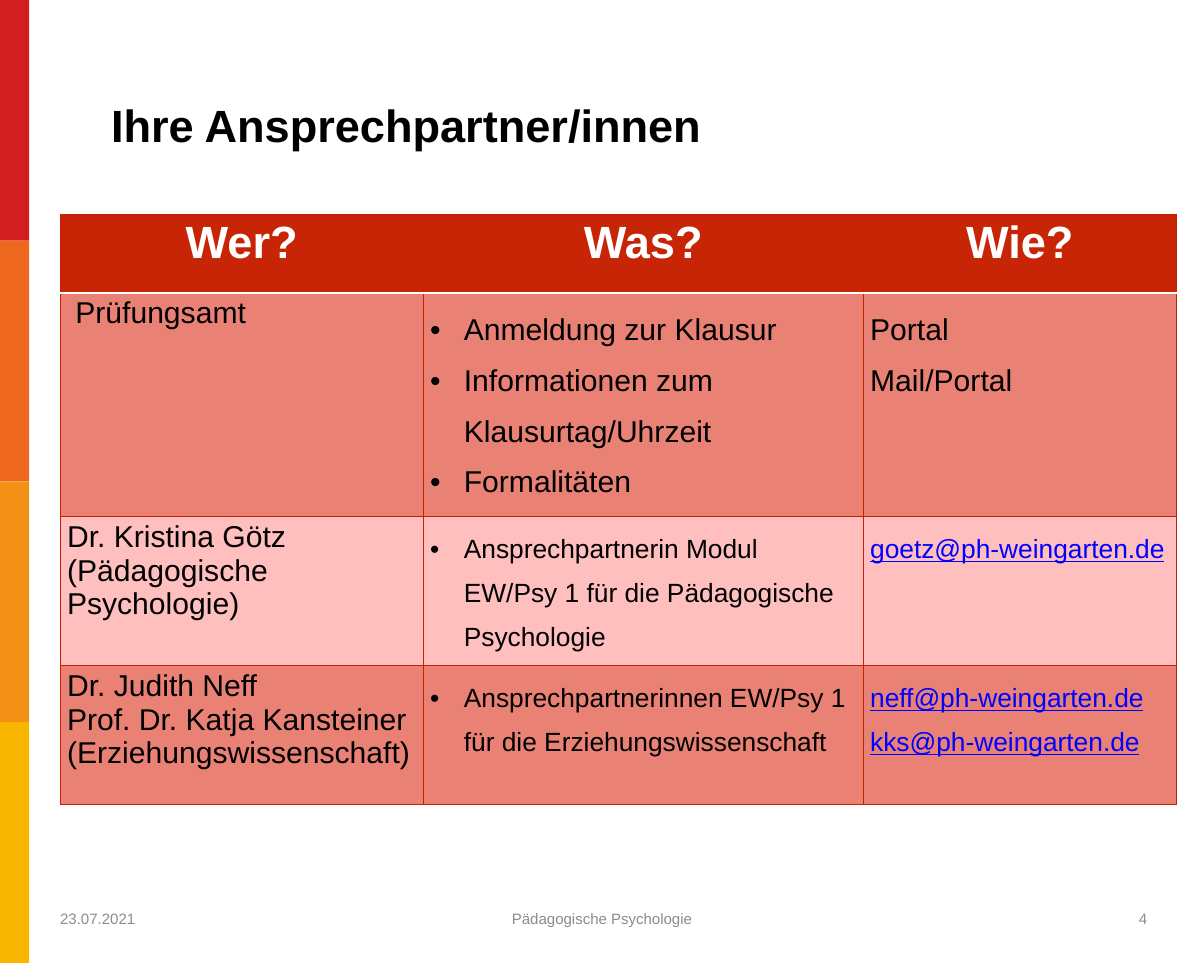
from dataclasses import dataclass

from lxml.etree import SubElement
from pptx import Presentation
from pptx.dml.color import RGBColor
from pptx.enum.shapes import MSO_SHAPE
from pptx.enum.text import MSO_ANCHOR, PP_ALIGN
from pptx.oxml import parse_xml
from pptx.oxml.ns import nsdecls, qn
from pptx.util import Inches, Pt

COLORS = {
    "red": "D11F20", "orange": "EE671F", "amber": "F29115", "yellow": "F9B600",
    "header": "C82506", "band": "E98275", "pale": "FFBFBF", "border": "C82101",
    "black": "000000", "white": "FFFFFF", "link": "0000FF", "gray": "8C8C8C",
}


@dataclass
class Label:
    text: str
    box: tuple[float, float, float, float]
    size: int = 16
    color: str = "gray"
    bold: bool = False
    align: PP_ALIGN = PP_ALIGN.LEFT
    inset: float = 0.1


@dataclass
class Contact:
    who: list[str]
    what: list[str]
    how: list[str]
    height: float
    fill: str
    size: int = 28
    link: bool = True


LABELS = [
    Label("Ihre Ansprechpartner/innen", (1.58, 0.87, 15.43, 1.93), 48, "black", True, inset=0.06),
    Label("23.07.2021", (0.79, 13.18, 4, 0.76)),
    Label("Pädagogische Psychologie", (5.89, 13.18, 6, 0.76), align=PP_ALIGN.CENTER),
    Label("4", (12.56, 13.18, 4.48, 0.76), align=PP_ALIGN.RIGHT),
]
HEADERS = ["Wer?", "Was?", "Wie?"]
HEADER_HEIGHT = 1.17
WIDTHS = [5.36, 6.5, 4.62]
CONTACTS = [
    Contact(
        [" Prüfungsamt"],
        ["Anmeldung zur Klausur", "Informationen zum Klausurtag/Uhrzeit", "Formalitäten"],
        ["Portal", "Mail/Portal"], 3.09, "band", size=32, link=False,
    ),
    Contact(
        ["Dr. Kristina Götz", "(Pädagogische Psychologie)"],
        ["Ansprechpartnerin Modul EW/Psy 1 für die Pädagogische Psychologie"],
        ["goetz@ph-weingarten.de"], 2.05, "pale",
    ),
    Contact(
        ["Dr. Judith Neff", "Prof. Dr. Katja Kansteiner", "(Erziehungswissenschaft)"],
        ["Ansprechpartnerinnen EW/Psy 1 für die Erziehungswissenschaft"],
        ["neff@ph-weingarten.de", "kks@ph-weingarten.de"], 2.05, "band",
    ),
]


def rgb(name: str) -> RGBColor:
    return RGBColor.from_string(COLORS[name])


def write(tf, lines: list[str], *, size: int, color: str = "black", bold: bool = False,
          underline: bool = False, align: PP_ALIGN = PP_ALIGN.LEFT,
          spacing: float = 1.0, bullet: bool = False) -> None:
    """Fill a text frame with one formatted paragraph per line."""
    for i, line in enumerate(lines):
        p = tf.paragraphs[0] if i == 0 else tf.add_paragraph()
        p.alignment = align
        p.line_spacing = spacing
        if bullet:
            pPr = p._p.get_or_add_pPr()
            pPr.set("marL", str(Inches(0.5)))
            pPr.set("indent", str(-Inches(0.5)))
            SubElement(pPr, qn("a:buFont"), typeface="Arial")
            SubElement(pPr, qn("a:buChar"), char="•")
        r = p.add_run()
        r.text = line
        r.font.name = "Arial"
        r.font.size = Pt(size)
        r.font.bold = bold
        r.font.underline = underline
        r.font.color.rgb = rgb(color)


def add_stripe(slide, index: int, color: str, height: float) -> None:
    sp = slide.shapes.add_shape(MSO_SHAPE.RECTANGLE, 0, Inches(index * height),
                                Inches(0.43), Inches(height))
    sp.shadow.inherit = False
    sp.fill.solid()
    sp.fill.fore_color.rgb = rgb(color)
    sp.line.fill.background()


def add_label(slide, label: Label) -> None:
    tf = slide.shapes.add_textbox(*map(Inches, label.box)).text_frame
    tf.word_wrap = True
    tf.vertical_anchor = MSO_ANCHOR.MIDDLE
    tf.margin_left = tf.margin_right = Inches(label.inset)
    write(tf, [label.text], size=label.size, color=label.color, bold=label.bold,
          align=label.align)


def style_cell(cell, fill: str, top: str = "border", bottom: str = "border") -> None:
    cell.fill.solid()
    cell.fill.fore_color.rgb = rgb(fill)
    sides = {"L": "border", "R": "border", "T": top, "B": bottom}
    for i, (side, color) in enumerate(sides.items()):
        width = Pt(2 if color == "white" else 0.75)
        cell._tc.get_or_add_tcPr().insert(i, parse_xml(
            f'<a:ln{side} {nsdecls("a")} w="{width}"><a:solidFill>'
            f'<a:srgbClr val="{COLORS[color]}"/></a:solidFill></a:ln{side}>'))


def add_contacts(slide) -> None:
    heights = [HEADER_HEIGHT] + [c.height for c in CONTACTS]
    table = slide.shapes.add_table(len(heights), len(WIDTHS), Inches(0.89), Inches(3.16),
                                   Inches(sum(WIDTHS)), Inches(sum(heights))).table
    for column, width in zip(table.columns, WIDTHS):
        column.width = Inches(width)
    for row, height in zip(table.rows, heights):
        row.height = Inches(height)
    for cell, text in zip(table.rows[0].cells, HEADERS):
        style_cell(cell, "header", bottom="white")
        write(cell.text_frame, [text], size=48, color="white", bold=True,
              align=PP_ALIGN.CENTER)
    for i, contact in enumerate(CONTACTS, 1):
        who, what, how = table.rows[i].cells
        for cell in (who, what, how):
            style_cell(cell, contact.fill, top="white" if i == 1 else "border")
        write(who.text_frame, contact.who, size=32)
        write(what.text_frame, contact.what, size=contact.size, spacing=1.5, bullet=True)
        write(how.text_frame, contact.how, size=contact.size, spacing=1.5,
              color="link" if contact.link else "black", underline=contact.link)


def main() -> None:
    prs = Presentation()
    prs.slide_width, prs.slide_height = Inches(17.78), Inches(14.22)
    slide = prs.slides.add_slide(prs.slide_layouts[6])
    stripes = ["red", "orange", "amber", "yellow"]
    for i, color in enumerate(stripes):
        add_stripe(slide, i, color, 14.22 / len(stripes))
    for label in LABELS:
        add_label(slide, label)
    add_contacts(slide)
    prs.save("out.pptx")


if __name__ == "__main__":
    main()
